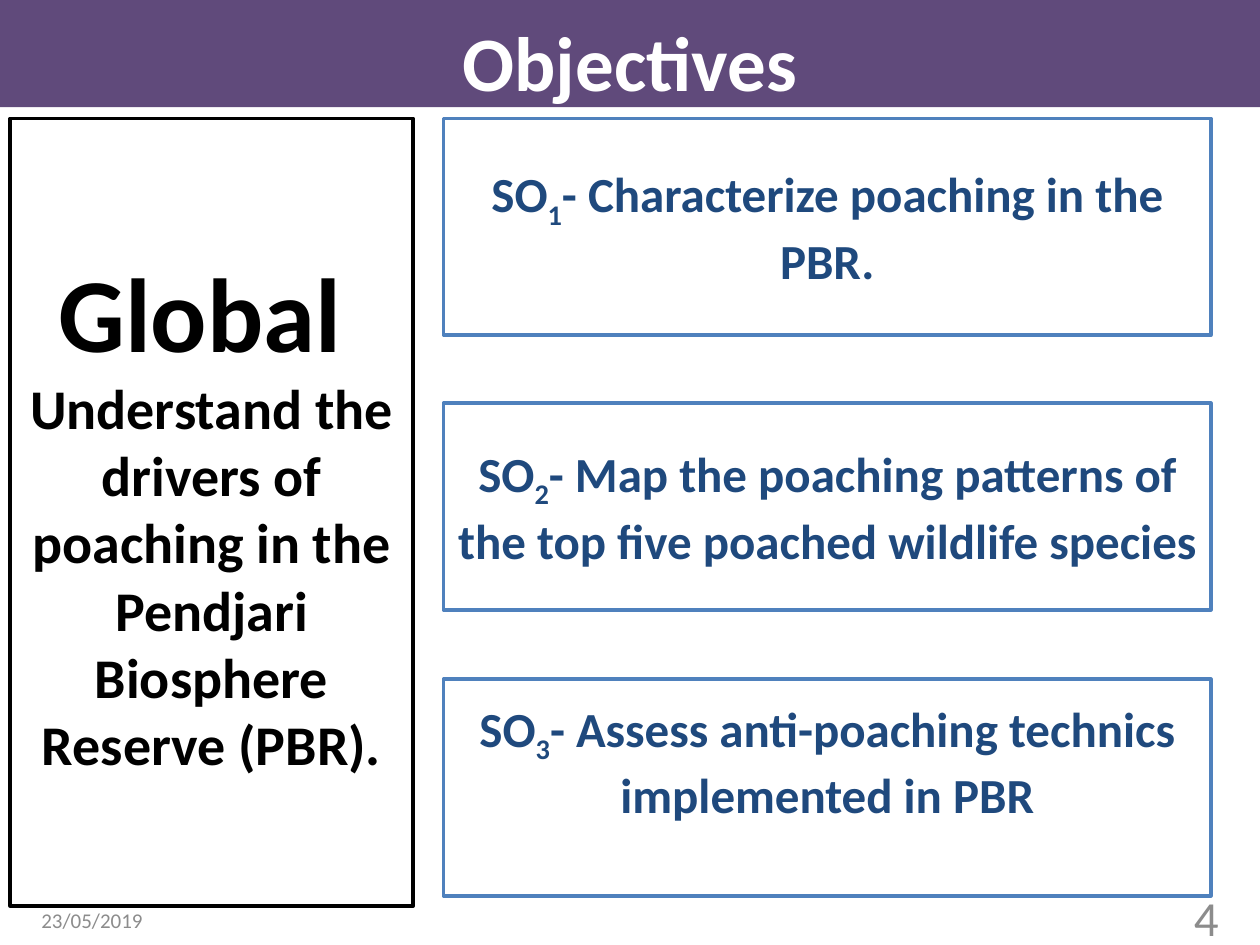
from dataclasses import dataclass

from lxml.etree import SubElement
from pptx import Presentation
from pptx.dml.color import RGBColor
from pptx.enum.shapes import MSO_SHAPE
from pptx.enum.text import MSO_ANCHOR, MSO_AUTO_SIZE, PP_ALIGN
from pptx.oxml.ns import qn
from pptx.util import Inches, Pt

COLORS = {
    "white": "FFFFFF",
    "black": "000000",
    "purple": "604A7B",
    "blue": "4F81BD",
    "navy": "1F497D",
    "gray": "8C8C8C",
}
FONT = "Calibri"
OBJECTIVE_LEFT, OBJECTIVE_WIDTH = 3.52, 6.09


@dataclass
class Objective:
    number: str
    text: str
    top: float
    height: float
    anchor: MSO_ANCHOR = MSO_ANCHOR.MIDDLE
    top_margin: float = 0.05


@dataclass
class FooterItem:
    text: str
    place: tuple[float, float, float, float]
    size: int
    align: PP_ALIGN


OBJECTIVES = [
    Objective("1", "- Characterize poaching in the PBR.", 0.94, 1.72),
    Objective("2", "- Map the poaching patterns of the top five poached wildlife species",
              3.2, 1.64),
    Objective("3", "- Assess anti-poaching technics implemented in PBR",
              5.39, 1.72, MSO_ANCHOR.TOP, 0.15),
]
FOOTER = [
    FooterItem("23/05/2019", (0.23, 7.1, 1.08, 0.4), 12, PP_ALIGN.LEFT),
    FooterItem("4", (9.2, 7.05, 0.57, 0.45), 28, PP_ALIGN.RIGHT),
]


def color(name: str) -> RGBColor:
    return RGBColor.from_string(COLORS[name])


def place_shape(shape, left: float, top: float, width: float, height: float) -> None:
    shape.left, shape.top = Inches(left), Inches(top)
    shape.width, shape.height = Inches(width), Inches(height)


def style_box(shape, fill: str, line: str | None = None) -> None:
    shape.fill.solid()
    shape.fill.fore_color.rgb = color(fill)
    if line:
        shape.line.color.rgb = color(line)
        shape.line.width = Pt(2)
    else:
        shape.line.fill.background()


def set_frame(shape, anchor: MSO_ANCHOR):
    frame = shape.text_frame
    frame.word_wrap = True
    frame.auto_size = MSO_AUTO_SIZE.NONE
    frame.vertical_anchor = anchor
    return frame


def add_span(para, text: str, size: int, ink: str, bold: bool = True,
             subscript: bool = False) -> None:
    span = para.add_run()
    span.text = text
    span.font.name = FONT
    span.font.size = Pt(size)
    span.font.bold = bold
    span.font.color.rgb = color(ink)
    if subscript:
        span.font._element.set("baseline", "-25000")


def remove_bullet(para) -> None:
    properties = para._p.get_or_add_pPr()
    properties.set("marL", "0")
    properties.set("indent", "0")
    SubElement(properties, qn("a:buNone"))


def add_title(page) -> None:
    title = page.shapes.title
    place_shape(title, 0, -0.01, 10, 0.86)
    style_box(title, "purple")
    frame = set_frame(title, MSO_ANCHOR.BOTTOM)
    frame.margin_bottom = 0
    para = frame.paragraphs[0]
    para.alignment = PP_ALIGN.CENTER
    add_span(para, "Objectives", 44, "white")


def add_global_goal(page) -> None:
    body = page.placeholders[1]
    place_shape(body, 0.08, 0.94, 3.2, 6.25)
    style_box(body, "white", "black")
    frame = set_frame(body, MSO_ANCHOR.MIDDLE)
    lines = [
        ("Global ", 60),
        ("Understand the drivers of poaching in the Pendjari Biosphere Reserve (PBR).", 32),
    ]
    for index, (text, size) in enumerate(lines):
        para = frame.add_paragraph() if index else frame.paragraphs[0]
        para.alignment = PP_ALIGN.CENTER
        para.space_before = Pt(0)
        remove_bullet(para)
        add_span(para, text, size, "black")


def add_objective(page, objective: Objective) -> None:
    box = page.shapes.add_shape(
        MSO_SHAPE.RECTANGLE, Inches(OBJECTIVE_LEFT), Inches(objective.top),
        Inches(OBJECTIVE_WIDTH), Inches(objective.height))
    box.shadow.inherit = False
    style_box(box, "white", "blue")
    frame = set_frame(box, objective.anchor)
    frame.margin_top = Inches(objective.top_margin)
    para = frame.paragraphs[0]
    para.alignment = PP_ALIGN.CENTER
    add_span(para, "SO", 28, "navy")
    add_span(para, objective.number, 28, "navy", subscript=True)
    add_span(para, objective.text, 28, "navy")


def add_footer_item(page, item: FooterItem) -> None:
    box = page.shapes.add_textbox(*(Inches(value) for value in item.place))
    para = set_frame(box, MSO_ANCHOR.MIDDLE).paragraphs[0]
    para.alignment = item.align
    add_span(para, item.text, item.size, "gray", bold=False)


def main() -> None:
    deck = Presentation()
    deck.slide_width, deck.slide_height = Inches(10), Inches(7.5)
    page = deck.slides.add_slide(deck.slide_layouts[1])

    # Title band and overall goal
    add_title(page)
    add_global_goal(page)

    # Specific objectives
    for objective in OBJECTIVES:
        add_objective(page, objective)

    # Date and page number
    for item in FOOTER:
        add_footer_item(page, item)

    deck.save("out.pptx")


if __name__ == "__main__":
    main()
